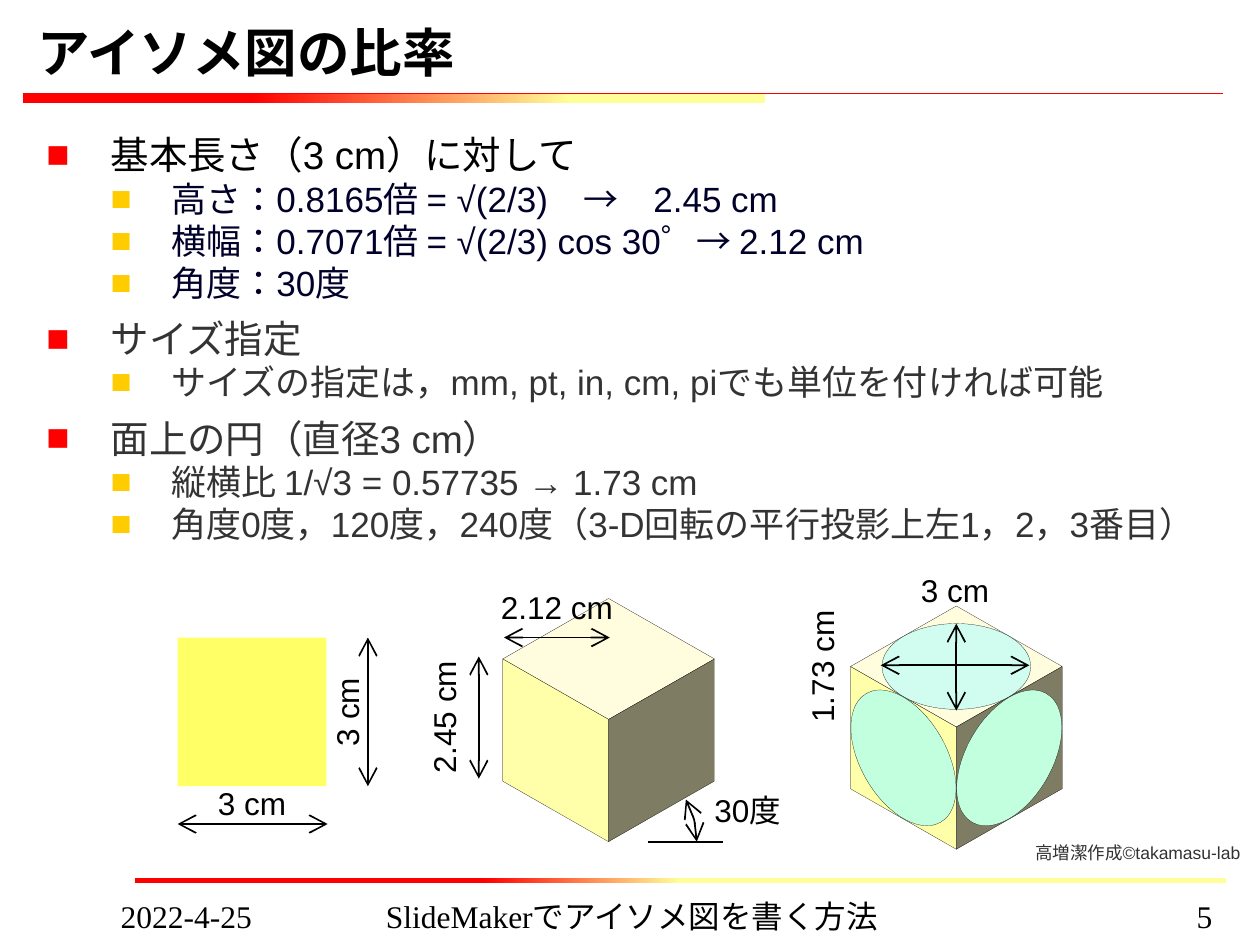
"""Build a slide on the proportions of isometric drawings, on a 100 x 75 grid."""
from dataclasses import dataclass

from lxml.etree import SubElement
from pptx import Presentation
from pptx.dml.color import RGBColor
from pptx.enum.lang import MSO_LANGUAGE_ID
from pptx.enum.shapes import MSO_CONNECTOR, MSO_SHAPE
from pptx.enum.text import MSO_ANCHOR, PP_ALIGN
from pptx.oxml.ns import qn
from pptx.util import Emu, Inches, Pt


@dataclass(frozen=True)
class Theme:
    sans: str = "Arial"
    serif: str = "Times New Roman"
    black: str = "000000"
    navy: str = "00002A"
    gray: str = "333333"
    credit_gray: str = "323232"
    red: str = "FF0000"
    gold: str = "FFCC00"
    pale: str = "FFFF99"
    square: str = "FFFF66"
    faces: tuple = ("FFFDDD", "FFFFAA", "7E7C62")
    circles: tuple = ("D0FDF0", "C2FFDF", "C2FFDF")
    title: int = 30
    head: int = 22
    item: int = 20
    label: int = 18
    credit: int = 10


T = Theme()
HALF, RISE, HEIGHT, SIDE = 8.4, 4.8, 9.7, 11.8
TEXT_INSET = (1, 0.5)
LEFT, CENTER, RIGHT = PP_ALIGN.LEFT, PP_ALIGN.CENTER, PP_ALIGN.RIGHT


@dataclass(frozen=True)
class Box:
    col: float
    row: float
    cols: float
    rows: float


@dataclass(frozen=True)
class Label:
    box: Box
    text: str
    size: int = T.label
    font: str = T.sans
    color: str = T.black
    align: PP_ALIGN = CENTER
    inset: tuple = (0.4, 0.4)
    wrap: bool = True
    bold: bool = False
    turn: int = 0
    anchor: MSO_ANCHOR = MSO_ANCHOR.TOP


@dataclass(frozen=True)
class Bullet:
    text: str
    color: str
    level: int = 1


@dataclass(frozen=True)
class Rule:
    start: tuple
    end: tuple
    arrows: bool = True
    color: str = T.black
    width: float = 1


BULLETS = [
    Bullet("基本長さ（3 cm）に対して", T.black, 0),
    Bullet("高さ：0.8165倍 = √(2/3)　→　2.45 cm", T.navy),
    Bullet("横幅：0.7071倍 = √(2/3) cos 30゜→ 2.12 cm", T.navy),
    Bullet("角度：30度", T.navy),
    Bullet("サイズ指定", T.gray, 0),
    Bullet("サイズの指定は，mm, pt, in, cm, piでも単位を付ければ可能", T.gray),
    Bullet("面上の円（直径3 cm）", T.gray, 0),
    Bullet("縦横比 1/√3 = 0.57735 → 1.73 cm", T.gray),
    Bullet("角度0度，120度，240度（3-D回転の平行投影上左1，2，3番目）", T.gray),
]
FOOTERS = [
    (Box(8.6, 70.7, 21.7, 3.1), "2022-4-25", LEFT),
    (Box(20.1, 70.7, 60.1, 3.1), "SlideMakerでアイソメ図を書く方法", CENTER),
    (Box(80.7, 70.7, 16.5, 3.1), "5", RIGHT),
]
LABELS = [
    Label(Box(2, 2.1, 95.3, 5), "アイソメ図の比率", T.title, align=LEFT,
          inset=TEXT_INSET, bold=True, anchor=MSO_ANCHOR.BOTTOM),
    *[Label(box, text, font=T.serif, align=align, inset=TEXT_INSET)
      for box, text, align in FOOTERS],
    Label(Box(14.5, 61.8, 11, 3.8), "3 cm"),
    Label(Box(22, 54.6, 11, 3.8), "3 cm", turn=270),
    Label(Box(29.7, 55, 11, 3.8), "2.45 cm", turn=270),
    Label(Box(38.7, 46.3, 11, 3.8), "2.12 cm"),
    Label(Box(56.3, 62.4, 11, 3.8), "30度", align=LEFT),
    Label(Box(70.3, 44.9, 11, 3.8), "3 cm"),
    Label(Box(59.7, 51, 11, 3.8), "1.73 cm", turn=270),
    Label(Box(81.2, 66.3, 18.8, 2.7), "高増潔作成©takamasu-lab", T.credit,
          color=T.credit_gray, align=LEFT, inset=TEXT_INSET, wrap=False),
]
RULES = [
    Rule((1.8, 7.4), (97.1, 7.4), False, T.red, 0.75),
    Rule((29.2, 50.6), (29.2, 62.4)),
    Rule((14.1, 65.4), (26, 65.4)),
    Rule((38, 52.1), (38, 61.8)),
    Rule((40, 50.6), (48.4, 50.6)),
    Rule((51.4, 66.8), (57.4, 66.8), False),
    Rule((69.9, 52.8), (81.7, 52.8)),
    Rule((75.9, 49.5), (75.9, 56.4)),
]


def g(n: float) -> Emu:
    return Inches(n / 10)


def rgb(value: str) -> RGBColor:
    return RGBColor.from_string(value)


def place(box: Box) -> tuple:
    return g(box.col), g(box.row), g(box.cols), g(box.rows)


def paint(sp, fill: str, width: float = 0) -> None:
    sp.shadow.inherit = False
    sp.fill.solid()
    sp.fill.fore_color.rgb = rgb(fill)
    if width:
        sp.line.color.rgb = rgb(T.black)
        sp.line.width = Pt(width)
    else:
        sp.line.fill.background()


def add_arrows(line) -> None:
    ln = line._get_or_add_ln()
    for tag in ("a:headEnd", "a:tailEnd"):
        SubElement(ln, qn(tag), type="arrow", w="lg", len="lg")


def add_bar(s, box: Box, red_to: float, pale_from: float) -> None:
    sp = s.shapes.add_shape(MSO_SHAPE.RECTANGLE, *place(box))
    paint(sp, T.red)
    sp.fill.gradient()
    sp.fill.gradient_angle = 0
    stops = ((red_to, T.red), (pale_from, T.pale))
    for stop, (position, color) in zip(sp.fill.gradient_stops, stops):
        stop.position = position
        stop.color.rgb = rgb(color)


def add_text_box(s, box: Box, inset: tuple, wrap: bool):
    sp = s.shapes.add_textbox(*place(box))
    tf = sp.text_frame
    tf.word_wrap = wrap
    tf.margin_left = tf.margin_right = g(inset[0])
    tf.margin_top = tf.margin_bottom = g(inset[1])
    return sp, tf


def add_run(p, text: str, size: int, color: str, font: str = T.sans, bold: bool = False) -> None:
    r = p.add_run()
    r.text = text
    r.font.size, r.font.name, r.font.bold = Pt(size), font, bold
    r.font.language_id = MSO_LANGUAGE_ID.JAPANESE
    r.font.color.rgb = rgb(color)


def add_label(s, label: Label) -> None:
    sp, tf = add_text_box(s, label.box, label.inset, label.wrap)
    sp.rotation = label.turn
    tf.vertical_anchor = label.anchor
    p = tf.paragraphs[0]
    p.alignment = label.align
    add_run(p, label.text, label.size, label.color, label.font, label.bold)


def add_bullets(s, box: Box, bullets: list[Bullet]) -> None:
    _, tf = add_text_box(s, box, TEXT_INSET, True)
    for i, b in enumerate(bullets):
        p = tf.add_paragraph() if i else tf.paragraphs[0]
        margin, hang, mark, size = ((9.9, 4.8, T.gold, T.item) if b.level
                                    else (5.1, 5.1, T.red, T.head))
        p.level = b.level
        pPr = p._p.get_or_add_pPr()
        pPr.set("marL", str(g(margin)))
        pPr.set("indent", str(-g(hang)))
        SubElement(SubElement(pPr, qn("a:buClr")), qn("a:srgbClr"), val=mark)
        SubElement(pPr, qn("a:buSzPct"), val="100000")
        SubElement(pPr, qn("a:buFont"), typeface=T.sans)
        SubElement(pPr, qn("a:buChar"), char="■")
        p.space_before = Pt(0 if b.level or not i else 0.3 * size)
        add_run(p, b.text, size, b.color)


def add_rule(s, rule: Rule) -> None:
    c = s.shapes.add_connector(MSO_CONNECTOR.STRAIGHT, *map(g, rule.start + rule.end))
    c.line.color.rgb = rgb(rule.color)
    c.line.width = Pt(rule.width)
    if rule.arrows:
        add_arrows(c.line)
    SubElement(c._element.spPr, qn("a:effectLst"))


def add_cube(s, x: float, top: float) -> None:
    left, right, mid = (x - HALF, top + RISE), (x + HALF, top + RISE), (x, top + 2 * RISE)
    base = (x, mid[1] + HEIGHT)
    faces = (((x, top), right, mid, left),
             (left, mid, base, (left[0], left[1] + HEIGHT)),
             (right, mid, base, (right[0], right[1] + HEIGHT)))
    for points, color in zip(faces, T.faces):
        start, *rest = [(g(a), g(b)) for a, b in points]
        fb = s.shapes.build_freeform(*start)
        fb.add_line_segments(rest, close=True)
        paint(fb.convert_to_shape(), color, 0.1)


def add_face_circles(s, x: float, top: float) -> None:
    minor = SIDE / 3 ** 0.5
    low = top + 1.5 * RISE + HEIGHT / 2
    centers = ((x, top + RISE, 0), (x - HALF / 2, low, 60), (x + HALF / 2, low, 120))
    for (cx, cy, turn), color in zip(centers, T.circles):
        box = Box(cx - SIDE / 2, cy - minor / 2, SIDE, minor)
        sp = s.shapes.add_shape(MSO_SHAPE.OVAL, *place(box))
        paint(sp, color, 0.1)
        sp.rotation = turn


def add_angle_arc(s, x: float, y: float, radius: float) -> None:
    sp = s.shapes.add_shape(
        MSO_SHAPE.ARC, *place(Box(x - radius, y - radius, 2 * radius, 2 * radius)))
    paint(sp, T.black, 1)
    sp.fill.background()
    sp.adjustments[0], sp.adjustments[1] = 331 * 0.6, 0
    add_arrows(sp.line)


def main() -> None:
    prs = Presentation()
    prs.slide_width, prs.slide_height = g(100), g(75)
    s = prs.slides.add_slide(prs.slide_layouts[6])
    add_bar(s, Box(10.7, 69.7, 86.6, 0.4), 0.32, 0.5)
    add_bar(s, Box(1.8, 7.4, 58.9, 0.8), 0.31, 0.74)
    add_bullets(s, Box(2.7, 9.9, 94.5, 59.1), BULLETS)
    paint(s.shapes.add_shape(MSO_SHAPE.RECTANGLE, *place(Box(14.1, 50.6, SIDE, SIDE))), T.square)
    add_cube(s, 48.3, 47.5)
    add_cube(s, 75.9, 48.1)
    add_face_circles(s, 75.9, 48.1)
    add_angle_arc(s, 48.4, 66.8, 6.9)
    for rule in RULES:
        add_rule(s, rule)
    for label in LABELS:
        add_label(s, label)
    prs.save("out.pptx")


if __name__ == "__main__":
    main()
